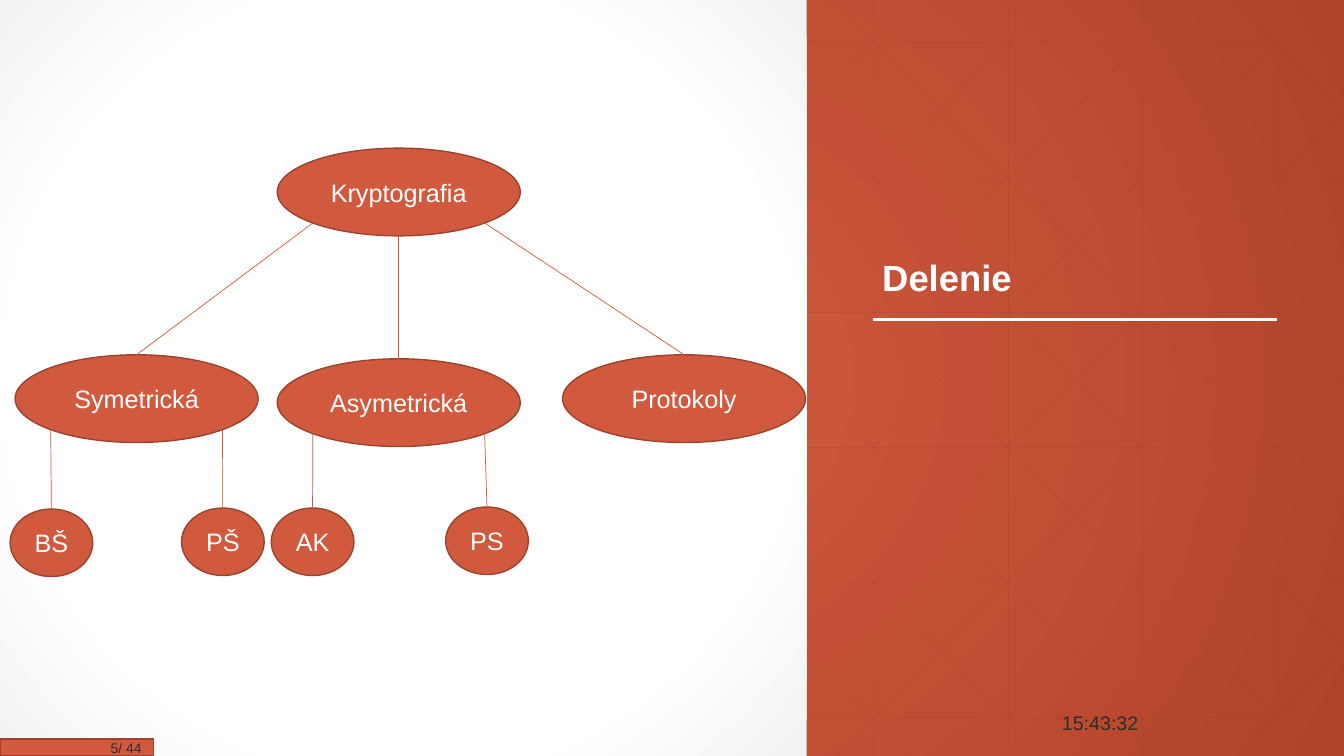
from math import sqrt
from lxml import etree
from pptx import Presentation
from pptx import util as u
from pptx.dml.color import RGBColor
from pptx.enum import shapes, text
from pptx.oxml import ns

WIDTH, HEIGHT = 13.33, 7.5
PANEL = 8
STEP = WIDTH / 10
RUST, EDGE, GRID, INK, WHITE = "D15A3E", "9B432E", "A43F27", "2D2E2D", "FFFFFF"

BACKGROUND = [(0, RUST), (100, "AF432A")]
PANEL_GLOW = [(0, WHITE), (69, WHITE), (100, "F2F2F2")]
LARGE, SMALL = (2.41, 0.87), (0.82, 0.67)
NODES = {
    "Kryptografia": (2.75, 1.47, LARGE),
    "Symetrická": (0.15, 3.52, LARGE),
    "Asymetrická": (2.75, 3.56, LARGE),
    "Protokoly": (5.58, 3.52, LARGE),
    "BŠ": (0.1, 5.05, SMALL),
    "PŠ": (1.8, 5.04, SMALL),
    "AK": (2.69, 5.04, SMALL),
    "PS": (4.42, 5.03, SMALL),
}
BRANCHES = [
    ("Kryptografia", "Symetrická", -1),
    ("Kryptografia", "Asymetrická", 0),
    ("Kryptografia", "Protokoly", 1),
    ("Asymetrická", "AK", -1),
    ("Asymetrická", "PS", 1),
    ("Symetrická", "PŠ", 1),
    ("Symetrická", "BŠ", -1),
]
TITLE = ("Delenie", (8.65, 0.62, 4, 2.4),
         {"size": u.Pt(26), "bold": True}, WHITE,
         {"line_spacing": 0.9, "alignment": text.PP_ALIGN.LEFT}, text.MSO_ANCHOR.BOTTOM)
CLOCK = ("15:43:32", (10.33, 7.05, 1.06, 0.24),
         {"size": u.Pt(14)}, INK,
         {"alignment": text.PP_ALIGN.RIGHT}, text.MSO_ANCHOR.MIDDLE)
COUNTER = (" 5/ 44", (0.96, 7.29, 1.39, 0.27),
           {"size": u.Pt(10)}, INK, {}, text.MSO_ANCHOR.TOP)


def color(value):
    return RGBColor.from_string(value)


def inches(*lengths):
    return [u.Inches(length) for length in lengths]


def set_all(target, values):
    for name, value in values.items():
        setattr(target, name, value)


def write(box, words, font, tint, layout, anchor):
    set_all(box.text_frame, {"word_wrap": True, "vertical_anchor": anchor})
    para = box.text_frame.paragraphs[0]
    set_all(para, layout)
    span = para.add_run()
    span.text = words
    set_all(span.font, {"name": "Arial", **font})
    span.font.color.rgb = color(tint)


def glow(fill, owner, stops):
    fill.gradient()
    gradient = owner.find(".//" + ns.qn("a:gradFill"))
    for child in list(gradient):
        gradient.remove(child)
    stop_list = etree.SubElement(gradient, ns.qn("a:gsLst"))
    for share, value in stops:
        stop = etree.SubElement(stop_list, ns.qn("a:gs"), pos=str(share * 1000))
        etree.SubElement(stop, ns.qn("a:srgbClr"), val=value)
    route = etree.SubElement(gradient, ns.qn("a:path"), path="circle")
    etree.SubElement(route, ns.qn("a:fillToRect"), l="50000", t="50000", r="50000", b="50000")


def add_line(page, start, end, tint, width, opacity=100):
    line = page.shapes.add_connector(shapes.MSO_CONNECTOR.STRAIGHT, *inches(*start, *end))
    line.line.color.rgb = color(tint)
    line.line.width = u.Pt(width)
    properties = line._element.spPr
    if opacity < 100:
        tone = properties.find(".//" + ns.qn("a:srgbClr"))
        etree.SubElement(tone, ns.qn("a:alpha"), val=str(opacity * 1000))
    etree.SubElement(properties, ns.qn("a:effectLst"))
    return line


def add_solid(page, kind, place):
    shape = page.shapes.add_shape(kind, *inches(*place))
    shape.shadow.inherit = False
    shape.fill.solid()
    shape.fill.fore_color.rgb = color(RUST)
    shape.line.color.rgb = color(EDGE)
    shape.line.width = u.Pt(1)
    return shape


def add_grid(page):
    lines = [((8.67 + i * STEP, 0), (8.67 + i * STEP, HEIGHT)) for i in range(4)]
    lines += [((PANEL, 0.42 + i * 1.34), (WIDTH, 0.42 + i * 1.34)) for i in range(6)]
    for first, drift in ((1.58, 1), (9.08, -1)):
        for i in range(9):
            top = first + i * STEP
            ends = [min(max(x, PANEL), WIDTH) for x in (top, top + drift * 7.46)]
            lines.append([(x, abs(x - top) * HEIGHT / 7.46) for x in ends])
    for start, end in lines:
        add_line(page, start, end, GRID, 0.5, 25)


def add_tree(page):
    ovals = {}
    for name, (left, top, size) in NODES.items():
        oval = add_solid(page, shapes.MSO_SHAPE.OVAL, (left, top, *size))
        write(oval, name, {"size": u.Pt(18)}, WHITE,
              {"alignment": text.PP_ALIGN.CENTER}, text.MSO_ANCHOR.MIDDLE)
        ovals[name] = oval
    for parent, child, side in BRANCHES:
        left, top, (width, height) = NODES[parent]
        reach = 1 / sqrt(2) if side else 1
        start = (left + width / 2 * (1 + side * reach), top + height / 2 * (1 + reach))
        add_line(page, start, start, RUST, 0.5).end_connect(ovals[child], 0)


def main():
    deck = Presentation()
    deck.slide_width, deck.slide_height = inches(WIDTH, HEIGHT)
    page = deck.slides.add_slide(deck.slide_layouts[5])
    glow(page.background.fill, page.element, BACKGROUND)

    add_grid(page)
    panel = add_solid(page, shapes.MSO_SHAPE.RECTANGLE, (0, 0, PANEL, HEIGHT))
    glow(panel.fill, panel._element, PANEL_GLOW)
    panel.line.fill.background()
    add_line(page, (8.66, 3.17), (12.67, 3.17), WHITE, 1.5)

    title = page.shapes.title
    page.shapes._spTree.append(title._element)
    add_tree(page)
    add_solid(page, shapes.MSO_SHAPE.RECTANGLE, (0, 7.33, 1.52, 0.17))
    for words, place, *style in (TITLE, CLOCK, COUNTER):
        box = title if words == TITLE[0] else page.shapes.add_textbox(*inches(*place))
        set_all(box, dict(zip(("left", "top", "width", "height"), inches(*place))))
        write(box, words, *style)
    deck.save("out.pptx")


if __name__ == "__main__":
    main()
